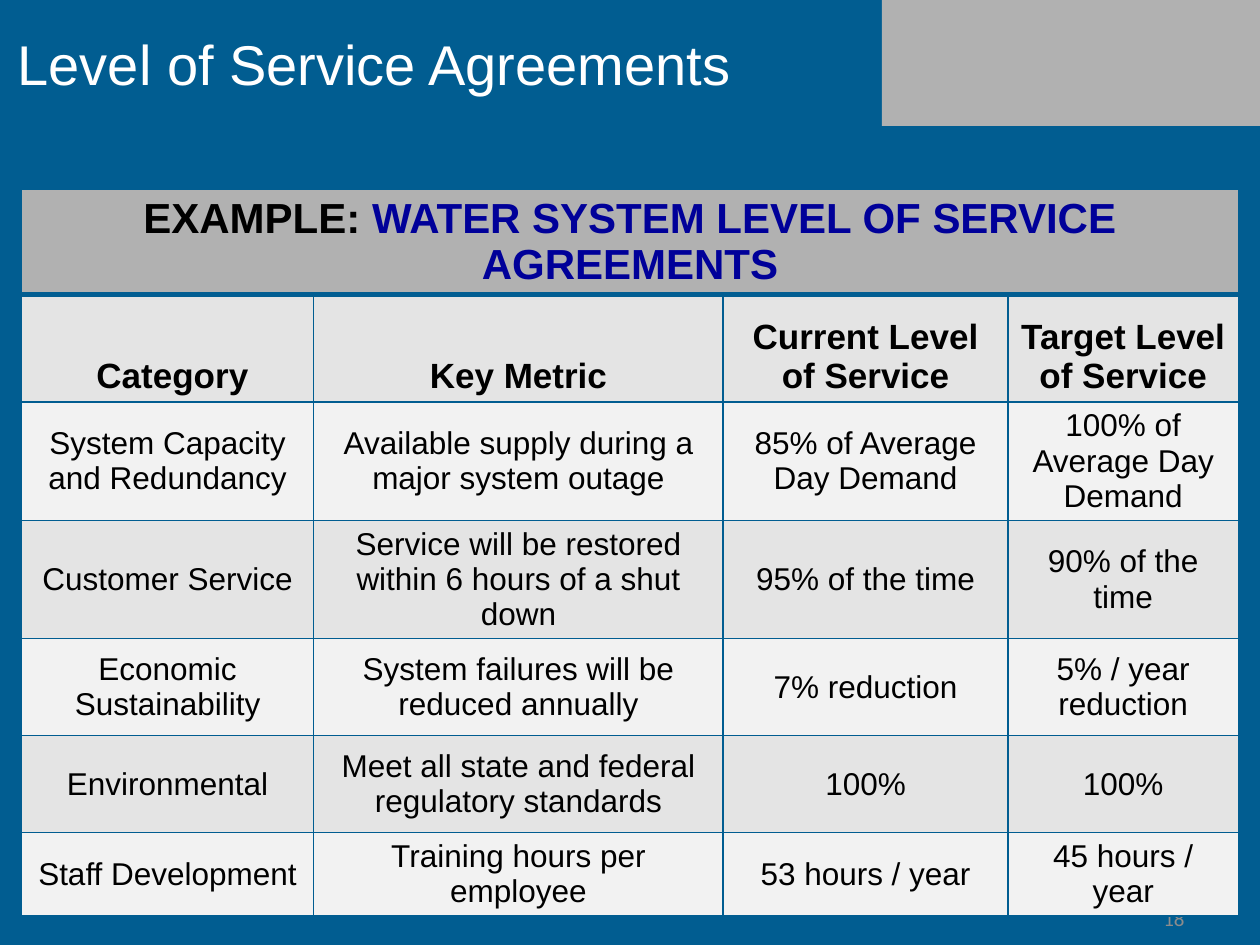
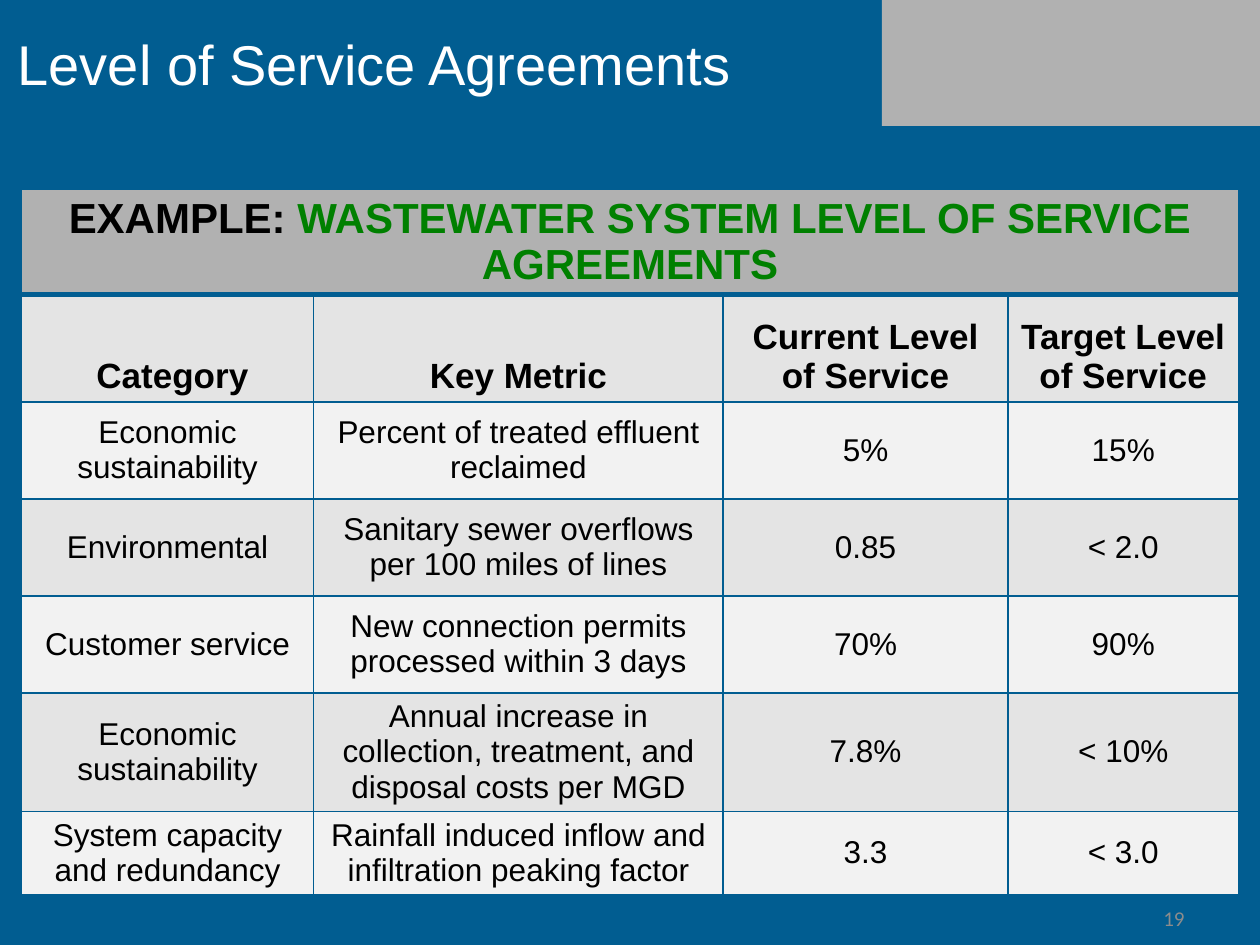
from dataclasses import dataclass

from lxml import etree
from pptx import Presentation
from pptx import util as u
from pptx.dml.color import RGBColor
from pptx.enum import shapes, text
from pptx.oxml import ns

COLORS = {
    "background": "015D91",
    "band": "B1B1B1",
    "title": "FFFFFF",
    "number": "8C8C8C",
    "text": "000000",
    "dark_row": "E4E4E4",
    "light_row": "F2F2F2",
    "water": "000099",
    "wastewater": "008000",
}
TITLE = "Level of Service Agreements"
HEADINGS = (" Category", "Key Metric", "Current Level of Service", "Target Level of Service")
COLUMN_WIDTHS = (2.32, 3.25, 2.26, 1.83)
TOP_ROW_HEIGHTS = (0.84, 0.85)
NORMAL_ROW, TALL_ROW, LAST_ROW = 0.77, 0.94, 0.66


@dataclass
class Agreement:
    number: int
    system: str
    row_heights: tuple[float, ...]
    rows: tuple[tuple[str, str, str, str], ...]


AGREEMENTS = (
    Agreement(18, "water", (TALL_ROW, TALL_ROW, NORMAL_ROW, NORMAL_ROW, LAST_ROW), (
        ("System Capacity and Redundancy", "Available supply during a major system outage",
         "85% of Average Day Demand", "100% of Average Day Demand"),
        ("Customer Service", "Service will be restored within 6 hours of a shut down",
         "95% of the time", "90% of the time"),
        ("Economic Sustainability", "System failures will be reduced annually",
         "7% reduction", "5% / year reduction"),
        ("Environmental", "Meet all state and federal regulatory standards", "100%", "100%"),
        ("Staff Development", "Training hours per employee", "53 hours / year", "45 hours / year"),
    )),
    Agreement(19, "wastewater", (NORMAL_ROW, NORMAL_ROW, NORMAL_ROW, TALL_ROW, LAST_ROW), (
        ("Economic sustainability", "Percent of treated effluent reclaimed", "5%", "15%"),
        ("Environmental", "Sanitary sewer overflows per 100 miles of lines", "0.85", "< 2.0"),
        ("Customer service", "New connection permits processed within 3 days", "70%", "90%"),
        ("Economic sustainability",
         "Annual increase in collection, treatment, and disposal costs per MGD", "7.8%", "< 10%"),
        ("System capacity and redundancy",
         "Rainfall induced inflow and infiltration peaking factor", "3.3", "< 3.0"),
    )),
)


def color(name: str) -> RGBColor:
    return RGBColor.from_string(COLORS[name])


def format_font(font, size: int, color_name: str, bold: bool = False, name: str = "Arial") -> None:
    font.name = name
    font.size = u.Pt(size)
    font.bold = bold
    font.color.rgb = color(color_name)


def add_frame(slide, number: int) -> None:
    """Add the grey corner band, the title and the slide number."""
    band = slide.shapes.add_shape(
        shapes.MSO_SHAPE.RECTANGLE, u.Inches(7), u.Inches(0), u.Inches(3), u.Inches(1))
    band.shadow.inherit = False
    band.fill.solid()
    band.fill.fore_color.rgb = color("band")
    band.line.fill.background()

    title = slide.shapes.title
    title.left, title.top = u.Inches(0.04), u.Inches(0)
    title.width, title.height = u.Inches(6.96), u.Inches(1)
    frame = title.text_frame
    frame.text = TITLE
    frame.auto_size = text.MSO_AUTO_SIZE.NONE
    frame.vertical_anchor = text.MSO_ANCHOR.MIDDLE
    frame.paragraphs[0].alignment = text.PP_ALIGN.LEFT
    format_font(frame.paragraphs[0].runs[0].font, 32, "title")

    box = slide.shapes.add_textbox(u.Inches(7.17), u.Inches(7.08), u.Inches(2.33), u.Inches(0.42))
    frame = box.text_frame
    frame.text = str(number)
    frame.word_wrap = True
    frame.vertical_anchor = text.MSO_ANCHOR.MIDDLE
    frame.paragraphs[0].alignment = text.PP_ALIGN.RIGHT
    format_font(frame.paragraphs[0].runs[0].font, 12, "number", name="Calibri")


def format_cell(cell, fill: str, anchor, top: int = 1, bottom: int = 1) -> None:
    """Set borders (widths in points), fill and text position."""
    properties = cell._tc.get_or_add_tcPr()
    for side, width in (("L", 1), ("R", 1), ("T", top), ("B", bottom)):
        line = etree.SubElement(properties, ns.qn(f"a:ln{side}"), w=str(u.Pt(width)))
        solid = etree.SubElement(line, ns.qn("a:solidFill"))
        etree.SubElement(solid, ns.qn("a:srgbClr"), val=COLORS["background"])
    cell.fill.solid()
    cell.fill.fore_color.rgb = color(fill)
    cell.vertical_anchor = anchor
    if anchor == text.MSO_ANCHOR.MIDDLE:
        cell.margin_top = cell.margin_bottom = u.Inches(0.01)
    cell.text_frame.paragraphs[0].alignment = text.PP_ALIGN.CENTER


def add_banner(table, system: str) -> None:
    for cell in table.rows[0].cells:
        format_cell(cell, "band", text.MSO_ANCHOR.MIDDLE, bottom=3)
    banner = table.cell(0, 0)
    banner.merge(table.cell(0, len(HEADINGS) - 1))
    paragraph = banner.text_frame.paragraphs[0]
    parts = (("EXAMPLE: ", "text"), (f"{system.upper()} SYSTEM LEVEL OF SERVICE AGREEMENTS", system))
    for words, color_name in parts:
        run = paragraph.add_run()
        run.text = words
        format_font(run.font, 24, color_name, bold=True)


def add_agreement_table(slide, agreement: Agreement) -> None:
    row_heights = TOP_ROW_HEIGHTS + agreement.row_heights
    table = slide.shapes.add_table(
        len(row_heights), len(COLUMN_WIDTHS), u.Inches(0.17), u.Inches(1.5),
        u.Inches(sum(COLUMN_WIDTHS)), u.Inches(sum(row_heights))).table
    table.first_row = table.horz_banding = False
    for column, width in zip(table.columns, COLUMN_WIDTHS):
        column.width = u.Inches(width)
    for row, height in zip(table.rows, row_heights):
        row.height = u.Inches(height)

    add_banner(table, agreement.system)
    for row_index, values in enumerate((HEADINGS, *agreement.rows), start=1):
        is_heading = row_index == 1
        fill = "dark_row" if row_index % 2 else "light_row"
        anchor = text.MSO_ANCHOR.BOTTOM if is_heading else text.MSO_ANCHOR.MIDDLE
        for cell, value in zip(table.rows[row_index].cells, values):
            cell.text_frame.text = value
            format_cell(cell, fill, anchor, top=3 if is_heading else 1)
            font = cell.text_frame.paragraphs[0].runs[0].font
            format_font(font, 20 if is_heading else 18, "text", bold=is_heading)


def main() -> None:
    presentation = Presentation()
    presentation.slide_width, presentation.slide_height = u.Inches(10), u.Inches(7.5)
    background = presentation.slide_master.background.fill
    background.solid()
    background.fore_color.rgb = color("background")
    title_only = presentation.slide_layouts.get_by_name("Title Only")
    for agreement in AGREEMENTS:
        slide = presentation.slides.add_slide(title_only)
        add_frame(slide, agreement.number)
        add_agreement_table(slide, agreement)
    presentation.save("out.pptx")


if __name__ == "__main__":
    main()
